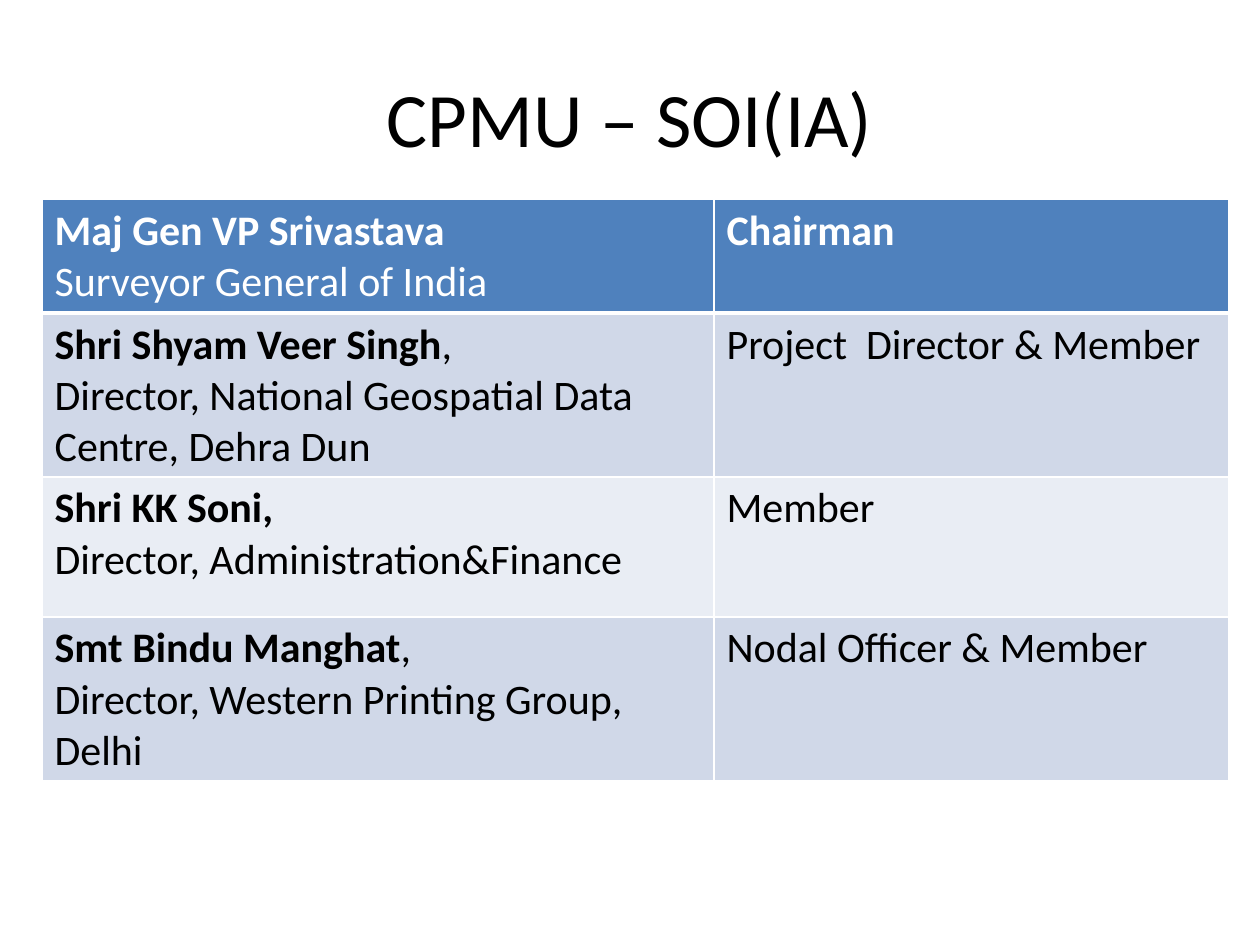
from typing import NamedTuple

from lxml.etree import SubElement
from pptx import Presentation
from pptx.dml.color import RGBColor
from pptx.enum.text import MSO_ANCHOR, PP_ALIGN
from pptx.oxml.ns import qn
from pptx.util import Pt

BLACK = RGBColor(0x00, 0x00, 0x00)
WHITE = RGBColor(0xFF, 0xFF, 0xFF)
HEADER_BLUE = RGBColor(0x4F, 0x81, 0xBD)
BANDS = (RGBColor(0xD0, 0xD8, 0xE8), RGBColor(0xE9, 0xED, 0xF4))

FONT = "Calibri"
COLUMN_WIDTHS = (Pt(384), Pt(294))
ROW_HEIGHTS = (Pt(58), Pt(80), Pt(80), Pt(80))
THIN, THICK = Pt(1), Pt(3)


class Member(NamedTuple):
    name: str
    separator: str
    post: str
    role: str


MEMBERS = (
    Member("Maj Gen VP Srivastava", "", "Surveyor General of India", "Chairman"),
    Member("Shri Shyam Veer Singh", ",",
           "Director, National Geospatial Data Centre, Dehra Dun",
           "Project  Director & Member"),
    Member("Shri KK Soni,", "", "Director, Administration&Finance", "Member"),
    Member("Smt Bindu Manghat", ",", "Director, Western Printing Group, Delhi",
           "Nodal Officer & Member"),
)


def add_run(paragraph, text: str, size: Pt, color: RGBColor, bold: bool = False) -> None:
    run = paragraph.add_run()
    run.text = text
    run.font.name = FONT
    run.font.size = size
    run.font.bold = bold
    run.font.color.rgb = color


def set_borders(cell, top: Pt, bottom: Pt) -> None:
    """Give the cell white borders; call before filling it, as borders come first."""
    properties = cell._tc.get_or_add_tcPr()
    for side, width in (("L", THIN), ("R", THIN), ("T", top), ("B", bottom)):
        line = SubElement(properties, qn(f"a:ln{side}"), w=str(int(width)))
        SubElement(SubElement(line, qn("a:solidFill")), qn("a:srgbClr"), val=str(WHITE))


def add_title(slide, text: str) -> None:
    frame = slide.shapes.add_textbox(Pt(36), Pt(21.6), Pt(648), Pt(90)).text_frame
    frame.word_wrap = True
    frame.vertical_anchor = MSO_ANCHOR.MIDDLE
    heading = frame.paragraphs[0]
    heading.alignment = PP_ALIGN.CENTER
    add_run(heading, text, Pt(44), BLACK)


def fill_member_row(cells, member: Member, index: int) -> None:
    is_header = index == 0
    color = WHITE if is_header else BLACK
    for cell in cells:
        set_borders(cell, THICK if index == 1 else THIN, THICK if is_header else THIN)
        cell.fill.solid()
        cell.fill.fore_color.rgb = HEADER_BLUE if is_header else BANDS[(index - 1) % 2]

    person, role = (cell.text_frame for cell in cells)
    add_run(person.paragraphs[0], member.name, Pt(24), color, bold=True)
    if member.separator:
        add_run(person.paragraphs[0], member.separator, Pt(24), color)
    add_run(person.add_paragraph(), member.post, Pt(24), color)
    add_run(role.paragraphs[0], member.role, Pt(24), color, bold=is_header)


def add_member_table(slide) -> None:
    table = slide.shapes.add_table(
        len(MEMBERS), len(COLUMN_WIDTHS), Pt(24), Pt(114),
        sum(COLUMN_WIDTHS), sum(ROW_HEIGHTS)).table
    for column, width in zip(table.columns, COLUMN_WIDTHS):
        column.width = width
    for index, (row, height, member) in enumerate(zip(table.rows, ROW_HEIGHTS, MEMBERS)):
        row.height = height
        fill_member_row(row.cells, member, index)


def main() -> None:
    presentation = Presentation()
    presentation.slide_width, presentation.slide_height = Pt(720), Pt(540)
    slide = presentation.slides.add_slide(presentation.slide_layouts[6])
    add_title(slide, "CPMU – SOI(IA)")
    add_member_table(slide)
    presentation.save("out.pptx")


if __name__ == "__main__":
    main()
